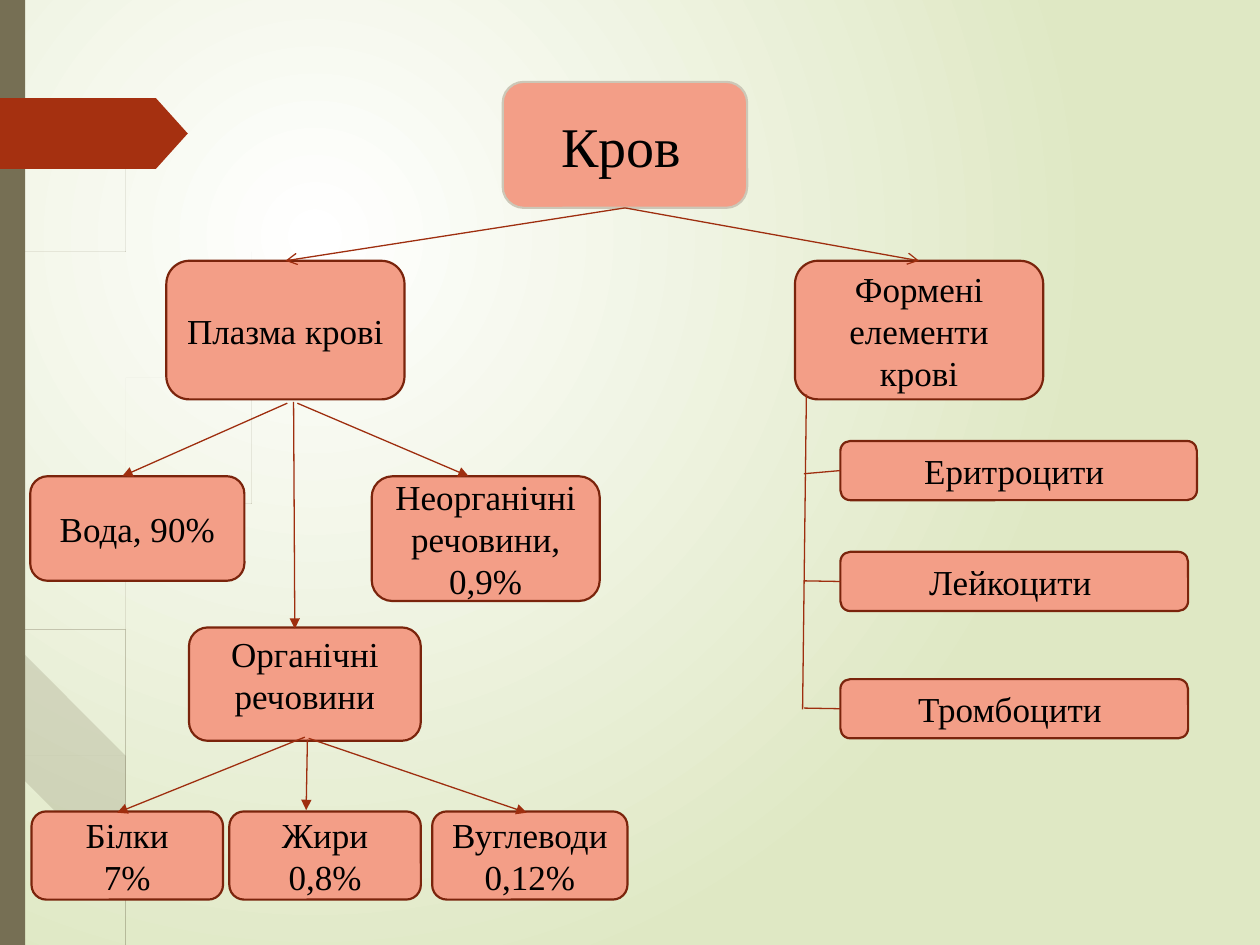
from pptx import Presentation
from pptx.dml.color import RGBColor
from pptx.enum.dml import MSO_FILL
from pptx.enum.shapes import MSO_CONNECTOR, MSO_SHAPE
from pptx.enum.text import MSO_ANCHOR, PP_ALIGN
from pptx.oxml import parse_xml
from pptx.oxml.ns import nsdecls, qn
from pptx.util import Inches, Pt

ROUND, RECT, TAG = MSO_SHAPE.ROUNDED_RECTANGLE, MSO_SHAPE.RECTANGLE, MSO_SHAPE.PENTAGON
MID, TOP, CENTER = MSO_ANCHOR.MIDDLE, MSO_ANCHOR.TOP, PP_ALIGN.CENTER
LINE = MSO_CONNECTOR.STRAIGHT
OLIVE, RUST, PINK, EDGE, LINK, PALE = "766F54", "A53010", "F39E87", "7A240C", "9E2E0F", "CCC7B7"
SERIF, SANS = "Times New Roman", "League Spartan"

BOXES = {
    "blood": ("Кров", (3.99, 0.65, 1.94, 1)),
    "plasma": ("Плазма крові", (1.32, 2.07, 1.89, 1.1)),
    "cells": ("Формені елементи крові", (6.31, 2.07, 1.97, 1.1)),
    "red": ("Еритроцити ", (6.67, 3.5, 2.83, 0.47)),
    "white": ("Лейкоцити", (6.67, 4.38, 2.76, 0.47)),
    "plates": ("Тромбоцити ", (6.67, 5.39, 2.76, 0.47)),
    "water": ("Вода, 90%", (0.24, 3.78, 1.7, 0.83)),
    "organic": ("Органічні речовини", (1.5, 4.98, 1.84, 0.9)),
    "mineral": ("Неорганічні речовини,\n0,9%", (2.95, 3.78, 1.81, 0.99)),
    "protein": ("Білки\v7%", (0.25, 6.44, 1.52, 0.7)),
    "fat": ("Жири\v0,8%", (1.82, 6.44, 1.52, 0.7)),
    "carbs": ("Вуглеводи\v0,12%", (3.43, 6.44, 1.55, 0.7)),
}
TAILS = {"blood": ("\u00a0", 18), "white": (" ", 18)}
ARROWS = [
    (2.36, 3.2, 3.72, 3.78), (2.28, 3.2, 0.97, 3.78), (2.33, 3.19, 2.34, 4.99),
    (2.45, 5.86, 4.18, 6.45), (2.44, 5.87, 2.43, 6.43), (2.42, 5.85, 0.93, 6.45),
]
TRUNK = (6.4, 3.13, 6.37, 5.63)
TWIGS = {"red": 3.76, "white": 4.61, "plates": 5.62}

# FADED
FADED = [
    [(0, 2.9, 0.01), (0.08, 3.5, 0.02), (0.24, 4.44, 0.03), (0.41, 5.21, 0.03),
     (0.6, 5.97, 0.03), (0.86, 6.93, 0.03), (1.06, 7.5, 0.04)],
    [(0.08, 3.5, 0), (0.2, 4.7, 0.03), (0.46, 6.2, 0.03), (0.64, 6.88, 0.03), (0.81, 7.5, 0.03)],
    [(2.17, 1.53, 0), (1.58, 2.45, 0.01), (1.1, 3.48, 0.01), (0.75, 4.61, 0.01),
     (0.6, 5.84, 0.02), (0.6, 6.1, 0.03), (0.65, 6.83, 0.03), (0.84, 7.5, 0.03)],
]
SOLID = [
    [(0.03, 0, 0.01), (0.05, 1.1, 0.01), (0.14, 2.33, 0.01), (0.29, 3.55, 0.02),
     (0.46, 4.7, 0.03), (0.58, 5.57, 0.04), (0.79, 6.58, 0.04), (0.92, 7, 0.04), (1.07, 7.5, 0.05)],
    [(0.5, 4.72, 0), (0.75, 5.91, 0.04), (0.9, 6.45, 0.04), (1.11, 7.07, 0.04), (1.28, 7.5, 0.04)],
    [(0.58, 1.41, 0), (0.48, 2.45, 0.01), (0.44, 3.49, 0.01), (0.47, 4.5, 0.03), (0.52, 5.05, 0.01)],
    [(2.16, 3.44, 0), (1.68, 4.05, 0.01), (1.3, 4.75, 0.02), (1.02, 5.52, 0.02),
     (0.9, 6.32, 0.03), (0.9, 6.56, 0.03), (0.98, 7.1, 0.03), (1.11, 7.5, 0.04)],
]


def rgb(code):
    return RGBColor.from_string(code)


def paint(shape, fill, edge=None):
    shape.shadow.inherit = False
    shape.fill.solid()
    shape.fill.fore_color.rgb = rgb(fill)
    if edge:
        shape.line.color.rgb = rgb(edge)
        shape.line.width = Pt(1.25)
    else:
        shape.line.fill.background()


def block(kind, place, fill, edge=None):
    shape = slide.shapes.add_shape(kind, *map(Inches, place))
    paint(shape, fill, edge)
    return shape


def style(run, size, name=SERIF):
    for key, value in {"size": Pt(size), "name": name}.items():
        setattr(run.font, key, value)
    run.font.color.rgb = rgb("000000")


def smooth(knots, steps=8):
    ends = [knots[0], *knots, knots[-1]]
    for a, b, c, d in zip(ends, ends[1:], ends[2:], ends[3:]):
        for t in (i / steps for i in range(steps)):
            yield [q + t * (r - p) / 2 + t * t * (2 * p - 5 * q + 4 * r - s) / 2
                   + t ** 3 * (3 * q - p - 3 * r + s) / 2 for p, q, r, s in zip(a, b, c, d)]
    yield knots[-1]


def blade(knots, alpha=None):
    curve = list(smooth(knots))
    rim = [(x - w / 2, y) for x, y, w in curve] + [(x + w / 2, y) for x, y, w in curve[::-1]]
    pen = slide.shapes.build_freeform(*rim[0], scale=Inches(1))
    pen.add_line_segments(rim[1:])
    shape = pen.convert_to_shape()
    paint(shape, OLIVE)
    if alpha:
        tint = shape._element.spPr.find(".//" + qn("a:srgbClr"))
        tint.append(parse_xml(f'<a:alpha {nsdecls("a")} val="{alpha * 1000}"/>'))


def link(ends, tip=None):
    wire = slide.shapes.add_connector(LINE, *map(Inches, ends))
    wire.line.color.rgb = rgb(LINK)
    wire.line.width = Pt(0.75)
    if tip:
        wire.line._get_or_add_ln().append(parse_xml(f'<a:tailEnd {nsdecls("a")} type="{tip}"/>'))
    wire._element.spPr.append(parse_xml(f'<a:effectLst {nsdecls("a")}/>'))
    return wire


deck = Presentation()
deck.slide_width, deck.slide_height = Inches(10), Inches(7.5)
slide = deck.slides.add_slide(deck.slide_layouts[6])

back = slide.background.fill
back.gradient()
for stop, code, spot in zip(back.gradient_stops, ("FFFFFF", "DFE8C4"), (0, 1)):
    stop.color.rgb = rgb(code)
    stop.position = spot
ramp = slide._element.find(".//" + qn("a:lin"))
ramp.getparent().replace(ramp, parse_xml(
    f'<a:path {nsdecls("a")} path="circle">'
    '<a:fillToRect l="50000" t="50000" r="100000" b="100000"/></a:path>'))

for knots in FADED:
    blade(knots, 20)
for knots in SOLID:
    blade(knots)
block(RECT, (0, 0, 0.2, 7.5), OLIVE)
block(TAG, (0, 0.78, 1.49, 0.56), RUST).adjustments[0] = 0.45

nodes = {}
for key, (text, place) in BOXES.items():
    root = key == "blood"
    node = nodes[key] = block(ROUND, place, PINK, PALE if root else EDGE)
    frame = node.text_frame
    frame.text = text
    frame.word_wrap = True
    frame.vertical_anchor = MID
    for para in frame.paragraphs:
        para.alignment = CENTER
        for run in para.runs:
            style(run, 32 if root else 20)
    if key in TAILS:
        run = frame.paragraphs[0].add_run()
        run.text, size = TAILS[key]
        style(run, size, SANS)
nodes["organic"].text_frame.vertical_anchor = TOP
nodes["organic"].text_frame.margin_top = 0

for key in ("plasma", "cells"):
    wire = link((0, 0, 0, 0), "arrow")
    wire.begin_connect(nodes["blood"], 2)
    wire.end_connect(nodes[key], 0)
for ends in ARROWS:
    link(ends, "triangle")
link(TRUNK)
for key, y in TWIGS.items():
    link((6.38, y, 6.67, y)).end_connect(nodes[key], 1)

deck.save("out.pptx")
